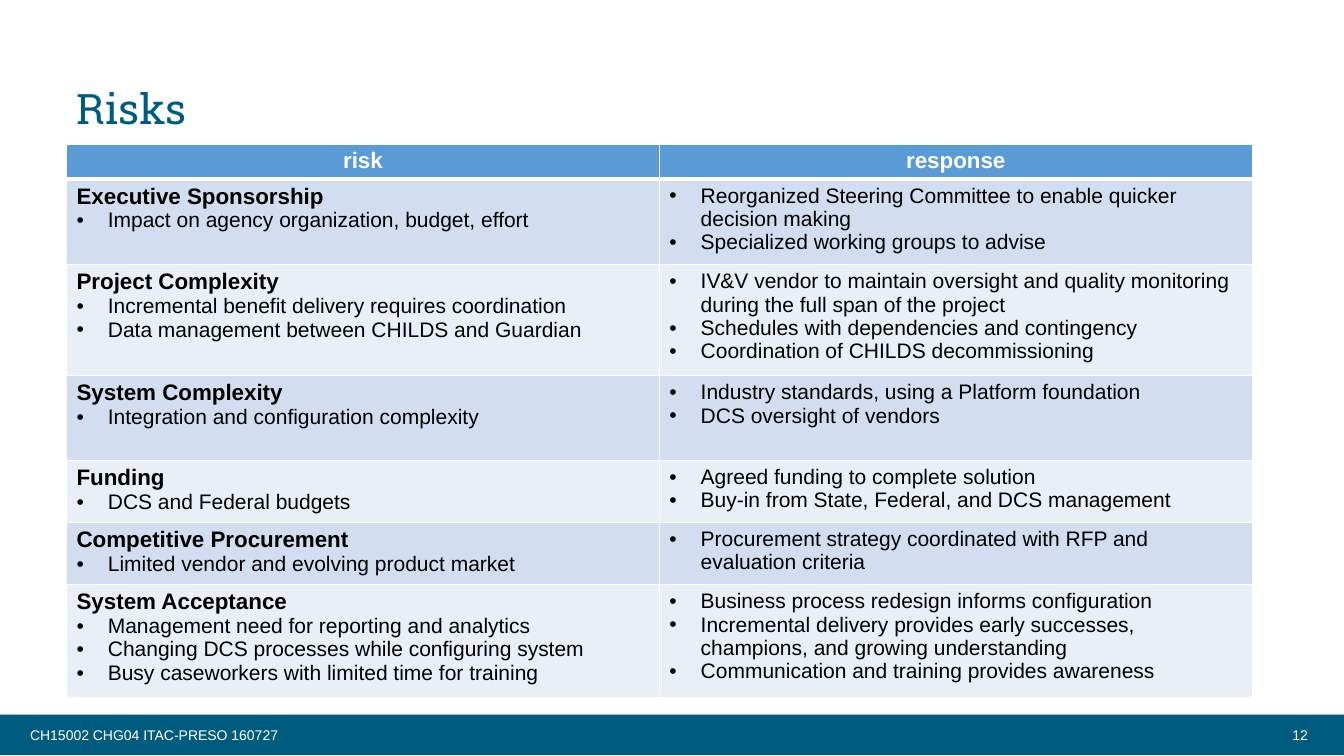
from lxml import etree
from pptx import Presentation
from pptx.dml.color import RGBColor
from pptx.enum import shapes, text
from pptx.oxml import ns
from pptx.util import Inches, Pt

TEAL, WHITE, BLACK = "005C7E", "FFFFFF", "000000"
HEADER_FILL = "5B9BD5"
BAND_FILLS = ("D2DEEF", "EAEFF7")
HEADINGS = ("risk", "response")
# Row height, risk name, risk bullets, response bullets
RISKS = [
    (0.84, "Executive Sponsorship",
     ["Impact on agency organization, budget, effort"],
     ["Reorganized Steering Committee to enable quicker decision making",
      "Specialized working groups to advise"]),
    (1.09, "Project Complexity",
     ["Incremental benefit delivery requires coordination",
      "Data management between CHILDS and Guardian"],
     ["IV&V vendor to maintain oversight and quality monitoring during the full span of the project",
      "Schedules with dependencies and contingency",
      "Coordination of CHILDS decommissioning"]),
    (0.84, "System Complexity",
     ["Integration and configuration complexity"],
     ["Industry standards, using a Platform foundation",
      "DCS oversight of vendors"]),
    (0.59, "Funding",
     ["DCS and Federal budgets"],
     ["Agreed funding to complete solution",
      "Buy-in from State, Federal, and DCS management"]),
    (0.59, "Competitive Procurement",
     ["Limited vendor and evolving product market"],
     ["Procurement strategy coordinated with RFP and evaluation criteria"]),
    (1.09, "System Acceptance",
     ["Management need for reporting and analytics",
      "Changing DCS processes while configuring system",
      "Busy caseworkers with limited time for training"],
     ["Business process redesign informs configuration",
      "Incremental delivery provides early successes, champions, and growing understanding",
      "Communication and training provides awareness"]),
]


def rgb(hex_color):
    return RGBColor.from_string(hex_color)


def set_font(paragraph, size, color, name="Arial", bold=False):
    font = paragraph.font
    font.size, font.name, font.bold = Pt(size), name, bold
    font.color.rgb = rgb(color)


def add_bullet(paragraph):
    properties = paragraph._p.get_or_add_pPr()
    properties.set("marL", str(Inches(0.31)))
    properties.set("indent", str(Inches(-0.31)))
    etree.SubElement(properties, ns.qn("a:buFont"), typeface="Arial")
    etree.SubElement(properties, ns.qn("a:buChar"), char="•")


def style_cell(cell, fill, bottom_width=1, top_width=1):
    """Give the cell white borders and a solid fill."""
    properties = cell._tc.get_or_add_tcPr()
    for side, width in (("L", 1), ("R", 1), ("T", top_width), ("B", bottom_width)):
        line = etree.SubElement(properties, ns.qn(f"a:ln{side}"), w=str(Pt(width)))
        solid = etree.SubElement(line, ns.qn("a:solidFill"))
        etree.SubElement(solid, ns.qn("a:srgbClr"), val=WHITE)
    cell.fill.solid()
    cell.fill.fore_color.rgb = rgb(fill)


def fill_cell(cell, bullets, name=None):
    """Write an optional bold name, then the bullets."""
    frame = cell.text_frame
    lines = ([name] if name else []) + bullets
    for index, line in enumerate(lines):
        paragraph = frame.paragraphs[0] if index == 0 else frame.add_paragraph()
        paragraph.text = line
        is_name = name is not None and index == 0
        if not is_name:
            add_bullet(paragraph)
        set_font(paragraph, 16 if is_name else 15, BLACK, bold=is_name)


def add_text(slide, box, content, size, name="Arial", color=WHITE,
             align=text.PP_ALIGN.LEFT, anchor=text.MSO_ANCHOR.TOP):
    frame = slide.shapes.add_textbox(*map(Inches, box)).text_frame
    frame.word_wrap = True
    frame.vertical_anchor = anchor
    paragraph = frame.paragraphs[0]
    paragraph.text = content
    paragraph.alignment = align
    set_font(paragraph, size, color, name)
    return paragraph


def add_title(slide, box):
    paragraph = add_text(slide, box, "Risks", 30, "Roboto Slab", TEAL,
                         anchor=text.MSO_ANCHOR.MIDDLE)
    paragraph.line_spacing = 0.9


def add_risk_table(slide, left, top, width):
    heights = [0.34] + [risk[0] for risk in RISKS]
    table = slide.shapes.add_table(
        len(heights), len(HEADINGS), Inches(left), Inches(top),
        Inches(width), Inches(sum(heights))).table
    for row, height in zip(table.rows, heights):
        row.height = Inches(height)
    for column, heading in enumerate(HEADINGS):
        cell = table.cell(0, column)
        cell.margin_top = cell.margin_bottom = Inches(0.04)
        style_cell(cell, HEADER_FILL, bottom_width=3)
        paragraph = cell.text_frame.paragraphs[0]
        paragraph.text = heading
        paragraph.alignment = text.PP_ALIGN.CENTER
        set_font(paragraph, 16, WHITE, bold=True)
    for row, (_, name, causes, responses) in enumerate(RISKS, start=1):
        risk_cell, response_cell = table.cell(row, 0), table.cell(row, 1)
        for cell in (risk_cell, response_cell):
            style_cell(cell, BAND_FILLS[(row - 1) % 2], top_width=3 if row == 1 else 1)
        fill_cell(risk_cell, causes, name)
        fill_cell(response_cell, responses)


def add_footer(slide, left, top, width, height):
    bar = slide.shapes.add_shape(shapes.MSO_SHAPE.RECTANGLE,
                                 *map(Inches, (left, top, width, height)))
    bar.shadow.inherit = False
    bar.fill.solid()
    bar.fill.fore_color.rgb = rgb(TEAL)
    bar.line.fill.background()
    text_top = top + 0.07
    add_text(slide, (left + 0.2, text_top, 9.11, 0.2),
             "CH15002 CHG04 ITAC-PRESO 160727", 10)
    add_text(slide, (left + width - 2.51, text_top, 2.25, 0.2), "12", 10,
             align=text.PP_ALIGN.RIGHT)


def main():
    presentation = Presentation()
    presentation.slide_width, presentation.slide_height = Inches(13.33), Inches(7.5)
    slide = presentation.slides.add_slide(presentation.slide_layouts[6])
    add_footer(slide, 0, 7.09, 13.33, 0.4)
    add_risk_table(slide, 0.66, 1.43, 11.76)
    add_title(slide, (0.66, 0.71, 11.76, 0.79))
    presentation.save("out.pptx")


if __name__ == "__main__":
    main()
